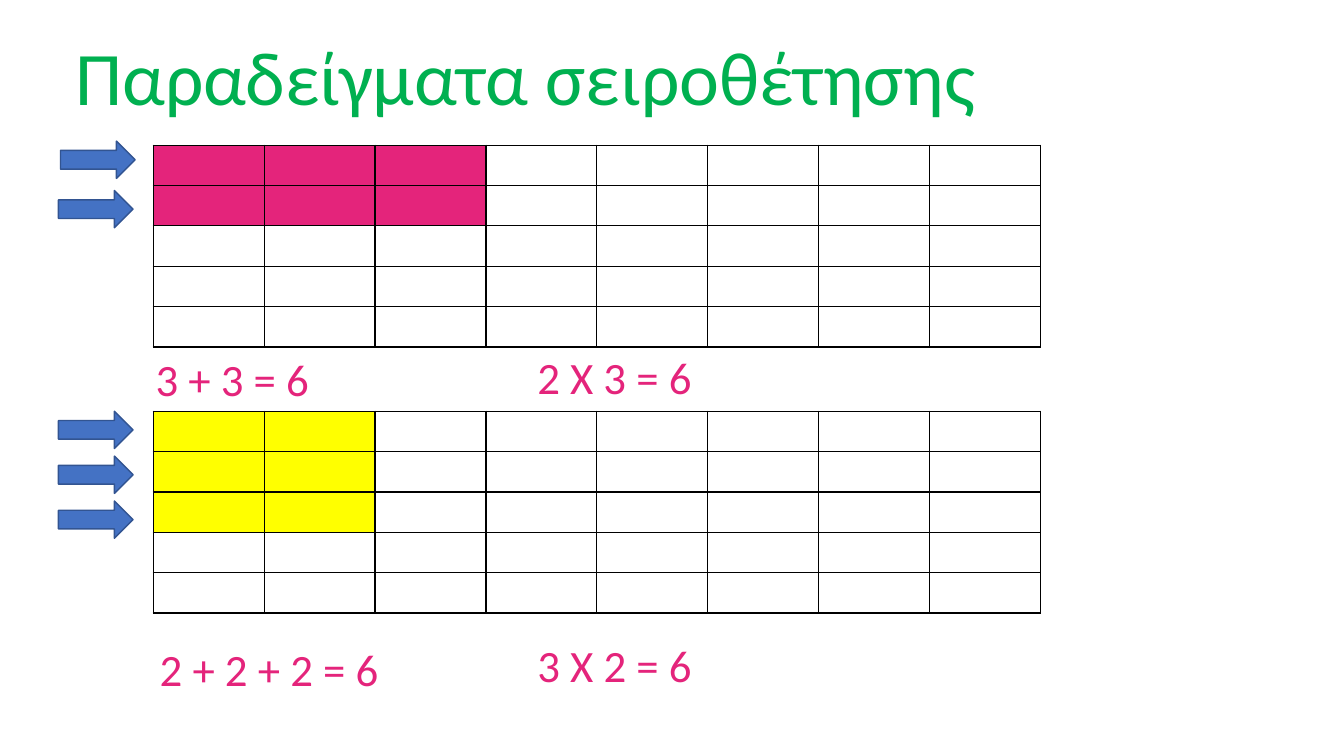
from lxml import etree
from pptx import Presentation
from pptx.dml.color import RGBColor
from pptx.enum.shapes import MSO_SHAPE
from pptx.enum.text import PP_ALIGN
from pptx.oxml import parse_xml
from pptx.oxml.ns import nsdecls
from pptx.util import Inches, Pt

ARROW = MSO_SHAPE.RIGHT_ARROW
CENTER = PP_ALIGN.CENTER
PINK, YELLOW, GREEN = "E4247B", "FFFF00", "00B050"
BLUE, DARK_BLUE, BLACK = "4472C4", "325491", "000000"


def rgb(value):
    return RGBColor.from_string(value)


class ArraySlide:
    font = "Calibri"

    def __init__(self, prs):
        self.s = prs.slides.add_slide(prs.slide_layouts[6])

    def text(self, text, x, y, w, h, size=32, color=PINK, wrap=False):
        sp = self.s.shapes.add_textbox(Inches(x), Inches(y), Inches(w), Inches(h))
        tf = sp.text_frame
        tf.word_wrap = wrap
        p = tf.paragraphs[0]
        p.alignment = CENTER
        r = p.add_run()
        r.text = text
        r.font.name = self.font
        r.font.size = Pt(size)
        r.font.color.rgb = rgb(color)

    def arrow(self, x, y):
        sp = self.s.shapes.add_shape(ARROW, Inches(x), Inches(y), Inches(0.74), Inches(0.37))
        sp.shadow.inherit = False
        sp.fill.solid()
        sp.fill.fore_color.rgb = rgb(BLUE)
        sp.line.color.rgb = rgb(DARK_BLUE)
        sp.line.width = Pt(1)

    def border(self, cell):
        tc_pr = cell._tc.get_or_add_tcPr()
        for side in ("lnL", "lnR", "lnT", "lnB"):
            ln = parse_xml(f'<a:{side} {nsdecls("a")} w="{Pt(1)}"/>')
            fill = etree.SubElement(ln, ln.tag.replace(side, "solidFill"))
            etree.SubElement(fill, ln.tag.replace(side, "srgbClr"), val=BLACK)
            tc_pr.append(ln)

    def grid(self, y, filled_rows, filled_cols, color, rows=5, cols=8):
        table = self.s.shapes.add_table(
            rows, cols, Inches(1.52), Inches(y), Inches(8.8), Inches(2)).table
        table.first_row = False
        table.horz_banding = False
        for i in range(rows):
            for j in range(cols):
                cell = table.cell(i, j)
                self.border(cell)
                if i < filled_rows and j < filled_cols:
                    cell.fill.solid()
                    cell.fill.fore_color.rgb = rgb(color)
                else:
                    cell.fill.background()


def main():
    prs = Presentation()
    prs.slide_width, prs.slide_height = Inches(13.33), Inches(7.5)
    slide = ArraySlide(prs)

    slide.text("Παραδείγματα σειροθέτησης", 0.6, 0.25, 9.23, 1.01, 54, GREEN)

    slide.grid(1.44, 2, 3, PINK)
    slide.text("2 Χ 3 = 6", 4.56, 3.42, 3.07, 0.64, wrap=True)
    slide.text("3 + 3 = 6", 0.77, 3.44, 3.07, 0.64, wrap=True)

    slide.grid(4.08, 3, 2, YELLOW)
    slide.text("2 + 2 + 2 = 6", 1.47, 6.32, 2.4, 0.64)
    slide.text("3 Χ 2 = 6", 5.22, 6.28, 1.75, 0.64)

    for x, y in ((0.6, 1.4), (0.58, 1.89)):
        slide.arrow(x, y)
    for i in range(3):
        slide.arrow(0.58, 4.08 + i * 0.445)

    prs.save("out.pptx")


if __name__ == "__main__":
    main()
